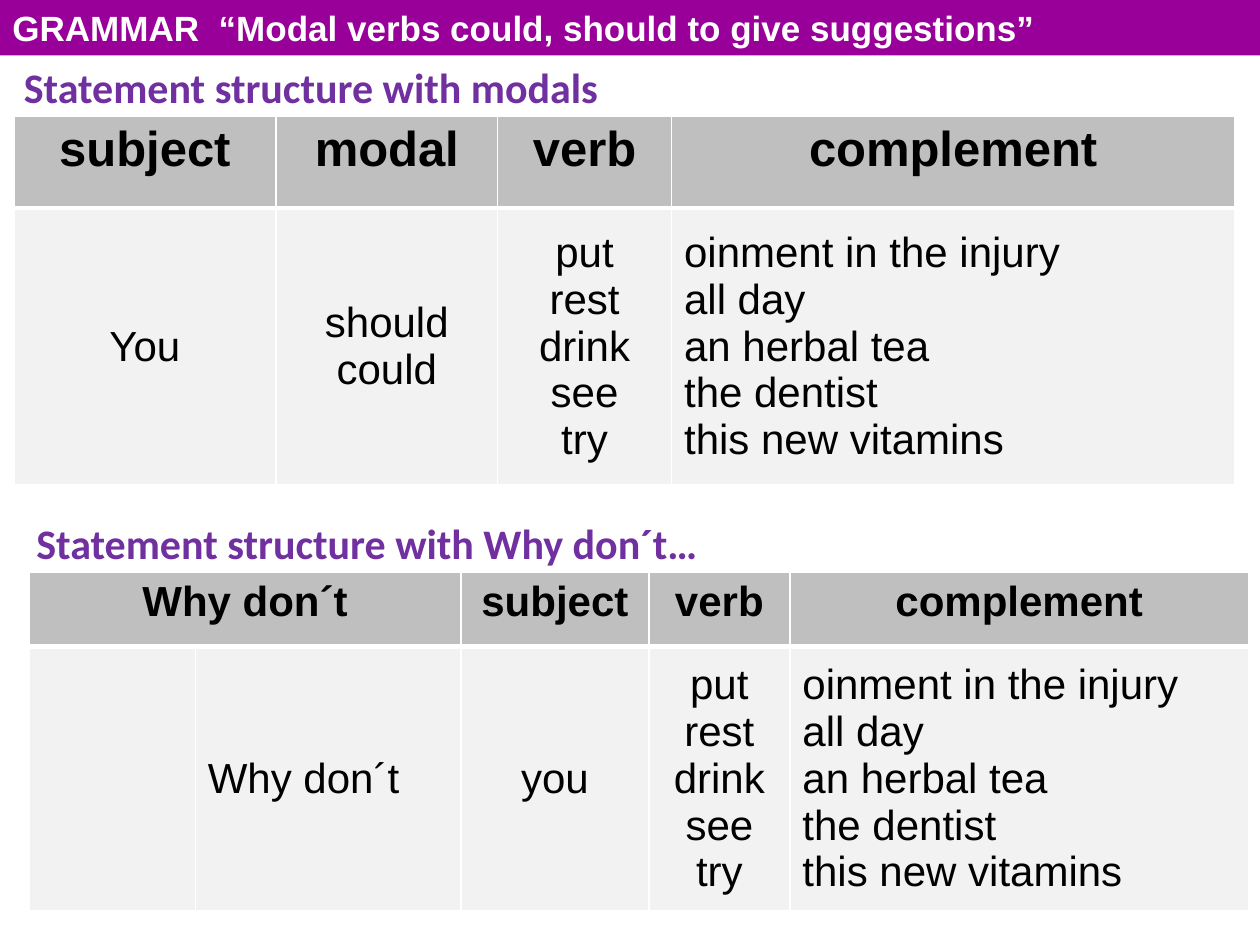
"""Build a grammar slide with two sentence-structure tables."""
from lxml import etree
from pptx import Presentation
from pptx import util as u
from pptx.dml.color import RGBColor
from pptx.enum import shapes, text
from pptx.oxml import ns

COLS, ROWS = 100, 75
UNIT = u.Inches(0.1)

WHITE = RGBColor(0xFF, 0xFF, 0xFF)
BLACK = RGBColor(0x00, 0x00, 0x00)
MAGENTA = RGBColor(0x99, 0x00, 0x99)
PURPLE = RGBColor(0x70, 0x30, 0xA0)
HEADER_GREY = RGBColor(0xBF, 0xBF, 0xBF)
BODY_GREY = RGBColor(0xF2, 0xF2, 0xF2)

LEFT, CENTER = text.PP_ALIGN.LEFT, text.PP_ALIGN.CENTER
TOP, MIDDLE = text.MSO_ANCHOR.TOP, text.MSO_ANCHOR.MIDDLE

VERBS = "put\nrest\ndrink\nsee\ntry"
COMPLEMENTS = ("oinment in the injury\nall day\nan herbal tea\n"
               "the dentist\nthis new vitamins")


def grid(*cells):
    """Turn grid cells into slide lengths."""
    return [round(c * UNIT) for c in cells]


def write(tf, content, size=24, font="Arial", color=BLACK, bold=False, align=LEFT):
    """Write each line of content as a formatted paragraph."""
    for i, line in enumerate(content.split("\n")):
        p = tf.add_paragraph() if i else tf.paragraphs[0]
        p.alignment = align
        r = p.add_run()
        r.text = line
        r.font.size, r.font.name, r.font.bold = u.Pt(size), font, bold
        r.font.color.rgb = color


def add_banner(s, content, height):
    """Add the full-width title bar."""
    sp = s.shapes.add_shape(shapes.MSO_SHAPE.RECTANGLE, *grid(0, 0, COLS, height))
    sp.shadow.inherit = False
    sp.fill.solid()
    sp.fill.fore_color.rgb = MAGENTA
    sp.line.fill.background()
    sp.text_frame.word_wrap = True
    write(sp.text_frame, content, size=20, color=WHITE, bold=True)


def add_heading(s, content, x, y, width):
    """Add a one-line section heading."""
    tf = s.shapes.add_textbox(*grid(x, y, width, 5)).text_frame
    tf.word_wrap = False
    write(tf, content, font="Calibri", color=PURPLE, bold=True)


def set_borders(cell, **widths):
    """Draw white borders around a cell, with widths in points by side."""
    tcPr = cell._tc.get_or_add_tcPr()
    for i, side in enumerate("LRTB"):
        ln = etree.Element(ns.qn(f"a:ln{side}"), w=str(u.Pt(widths.get(side, 1))))
        fill = etree.SubElement(ln, ns.qn("a:solidFill"))
        etree.SubElement(fill, ns.qn("a:srgbClr"), val=str(WHITE))
        tcPr.insert(i, ln)


def fill_cell(cell, content, color, anchor, borders, **fmt):
    """Colour, outline and write one table cell."""
    cell.fill.solid()
    cell.fill.fore_color.rgb = color
    cell.vertical_anchor = anchor
    set_borders(cell, **borders)
    if content:
        write(cell.text_frame, content, **fmt)


def add_structure(s, x, y, widths, heights, header, body, aligns, header_size):
    """Add a table with a bold header row and one body row."""
    frame = s.shapes.add_table(2, len(widths), *grid(x, y, sum(widths), sum(heights)))
    table = frame.table
    for col, width in zip(table.columns, grid(*widths)):
        col.width = width
    for row, height in zip(table.rows, grid(*heights)):
        row.height = height
    for c, (title, content, align) in enumerate(zip(header, body, aligns)):
        fill_cell(table.cell(0, c), title, HEADER_GREY, TOP, {"B": 3},
                  size=header_size, bold=True, align=CENTER)
        fill_cell(table.cell(1, c), content, BODY_GREY, MIDDLE, {"T": 3}, align=align)
    return table


def main():
    """Build and save the slide."""
    prs = Presentation()
    prs.slide_width, prs.slide_height = grid(COLS, ROWS)
    s = prs.slides.add_slide(prs.slide_layouts[6])

    add_structure(s, 1.1, 9.2, [20.8, 17.6, 13.8, 44.7], [7.3, 22],
                  ["subject", "modal", "verb", "complement"],
                  ["You", "should\ncould", VERBS, COMPLEMENTS],
                  [CENTER, CENTER, CENTER, LEFT], header_size=28)
    add_heading(s, "Statement structure with modals", 0.9, 4.4, 48.1)
    add_heading(s, "Statement structure with Why don´t…", 1.9, 40.6, 55.3)
    table = add_structure(s, 2.3, 45.4, [13.2, 21.1, 14.9, 11.2, 36.4], [5.9, 21],
                          ["Why don´t", "", "subject", "verb", "complement"],
                          ["", "Why don´t", "you", VERBS, COMPLEMENTS],
                          [LEFT, LEFT, CENTER, CENTER, LEFT], header_size=24)
    table.cell(0, 0).merge(table.cell(0, 1))
    add_banner(s, "GRAMMAR  “Modal verbs could, should to give suggestions”", 4.4)

    prs.save("out.pptx")


if __name__ == "__main__":
    main()
